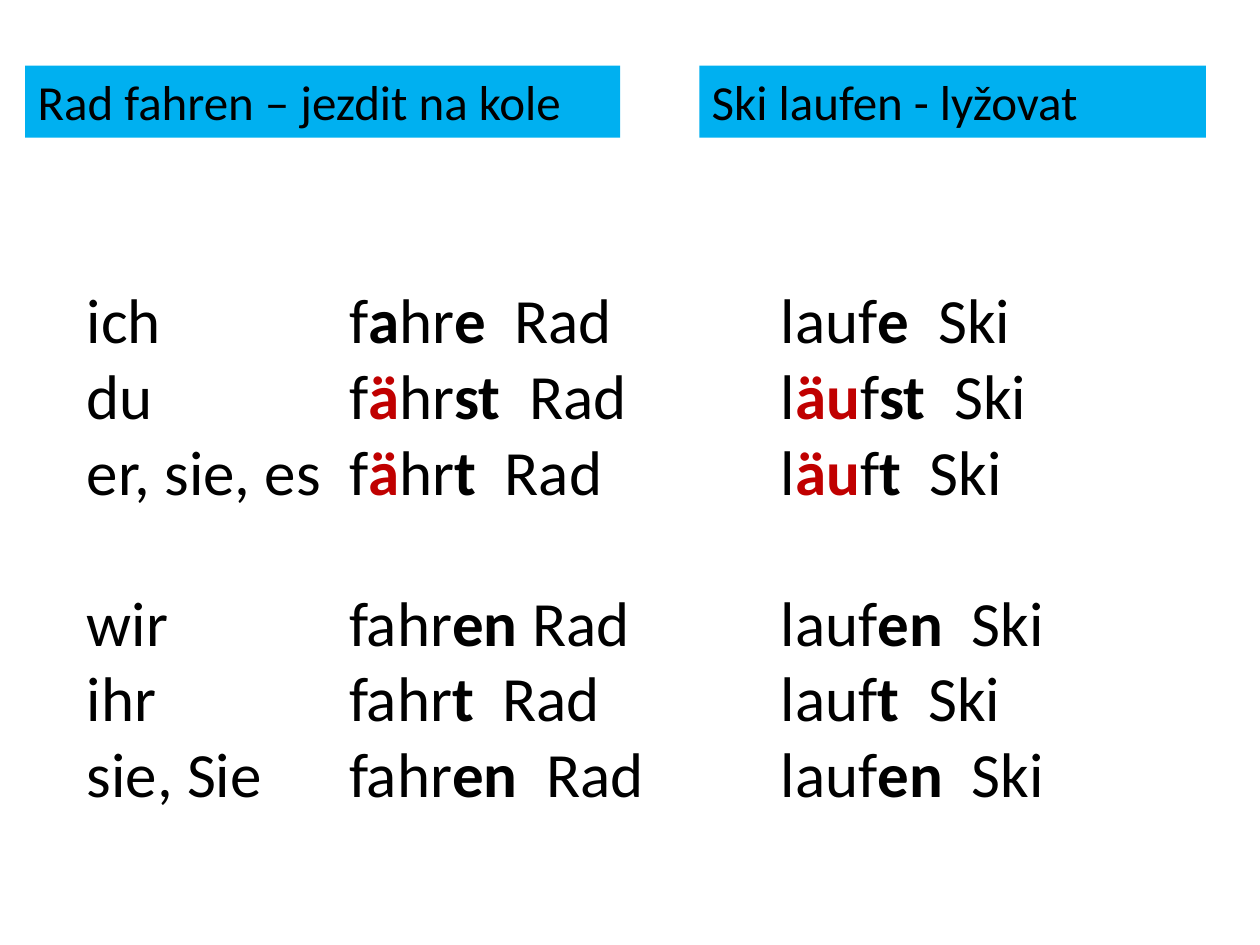
from pptx import Presentation
from pptx.dml.color import RGBColor
from pptx.enum.shapes import MSO_SHAPE
from pptx.enum.text import MSO_ANCHOR, PP_ALIGN
from pptx.util import Pt


class Theme:
    font = "Calibri"
    ink = RGBColor(0, 0, 0)
    band = RGBColor(0x00, 0xB0, 0xF0)
    umlaut = RGBColor(0xC0, 0x00, 0x00)
    head = Pt(28)
    body = Pt(36)


def style(para, size):
    para.font.name = Theme.font
    para.font.size = size
    para.font.color.rgb = Theme.ink


deck = Presentation()
deck.slide_width, deck.slide_height = Pt(720), Pt(540)
slide = deck.slides.add_slide(deck.slide_layouts[6])

# Verb headings: left, width, text
heads = [
    (14.4, 340, "Rad fahren – jezdit na kole"),
    (399.6, 289.5, "Ski laufen - lyžovat"),
]
for left, width, text in heads:
    bar = slide.shapes.add_shape(
        MSO_SHAPE.RECTANGLE, Pt(left), Pt(37.5), Pt(width), Pt(41.2))
    bar.shadow.inherit = False
    bar.fill.solid()
    bar.fill.fore_color.rgb = Theme.band
    bar.line.fill.background()
    bar.text_frame.vertical_anchor = MSO_ANCHOR.TOP
    para = bar.text_frame.paragraphs[0]
    para.text = text
    para.alignment = PP_ALIGN.LEFT
    style(para, Theme.head)

# Conjugation columns: left, width, height, lines; *stars* enclose bold parts
columns = [
    (42.5, 158.4, 312.5,
     ["ich", "du", "er, sie, es", "wir", "ihr", "sie, Sie"]),
    (192.4, 241, 312.5,
     ["f*a*hr*e*  Rad", "f*ä*hr*st*  Rad", "f*ä*hr*t*  Rad",
      "fahr*en* Rad", "fahr*t*  Rad", "fahr*en*  Rad"]),
    (439.2, 221, 356.4,
     ["lauf*e*  Ski", "l*äu*f*st*  Ski", "l*äu*f*t*  Ski",
      "lauf*en*  Ski", "lauf*t*  Ski", "lauf*en*  Ski"]),
]
plural = 3  # first plural line, set off by one line of space
for left, width, height, lines in columns:
    box = slide.shapes.add_textbox(Pt(left), Pt(157), Pt(width), Pt(height))
    frame = box.text_frame
    frame.word_wrap = True
    for row, line in enumerate(lines):
        para = frame.add_paragraph() if row else frame.paragraphs[0]
        style(para, Theme.body)
        if row == plural:
            para.space_before = Pt(43.2)
        for part, text in enumerate(line.split("*")):
            run = para.add_run()
            run.text = text
            if part % 2:
                run.font.bold = True
            if "ä" in text:
                run.font.color.rgb = Theme.umlaut

deck.save("out.pptx")
